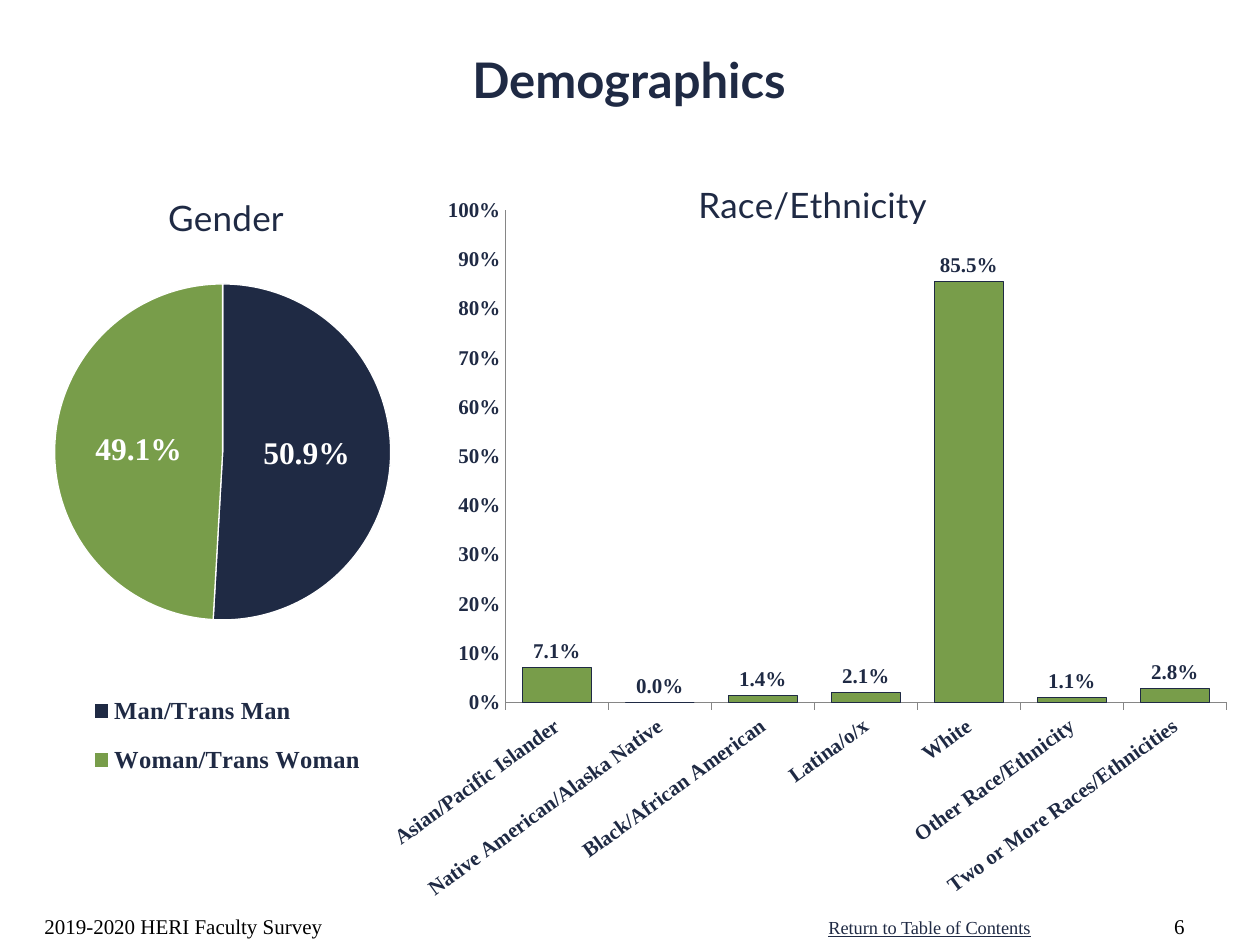
from lxml.etree import SubElement
from pptx import Presentation
from pptx.chart.data import CategoryChartData
from pptx.dml.color import RGBColor
from pptx.enum.chart import XL_CHART_TYPE, XL_LABEL_POSITION, XL_LEGEND_POSITION, XL_TICK_MARK
from pptx.enum.text import MSO_ANCHOR, MSO_AUTO_SIZE, PP_ALIGN
from pptx.oxml.ns import qn
from pptx.util import Pt

EMU_PER_PX = 914400 / 126
NAVY, GREEN, WHITE, BLACK, GRAY = "1F2A44", "789D4A", "FFFFFF", "000000", "868686"
HEADING, BODY = "Lato", "Times New Roman"


def px(value):
    return round(value * EMU_PER_PX)


def color(value):
    return RGBColor.from_string(value)


def style_font(font, size, fill, name=BODY, bold=False):
    font.size = Pt(size)
    font.name = name
    font.bold = bold
    font.color.rgb = color(fill)


def set_layout(element, index, target=None, **fractions):
    for old in element.findall(qn("c:layout")):
        element.remove(old)
    layout = SubElement(element, qn("c:layout"))
    element.insert(index, layout)
    manual = SubElement(layout, qn("c:manualLayout"))
    if target:
        SubElement(manual, qn("c:layoutTarget")).set("val", target)
    for axis in ("x", "y"):
        SubElement(manual, qn(f"c:{axis}Mode")).set("val", "edge")
    for key, value in fractions.items():
        SubElement(manual, qn(f"c:{key}")).set("val", str(value))


class SlideBuilder:
    def __init__(self, presentation):
        self.slide = presentation.slides.add_slide(presentation.slide_layouts[6])
        self.slide.background.fill.solid()
        self.slide.background.fill.fore_color.rgb = color(WHITE)

    def text(self, content, box, size, fill, name=BODY, bold=False, underline=False,
             align=PP_ALIGN.LEFT, anchor=MSO_ANCHOR.BOTTOM, wrap=True):
        shape = self.slide.shapes.add_textbox(*map(px, box))
        frame = shape.text_frame
        frame.text = content
        frame.word_wrap = wrap
        frame.auto_size = MSO_AUTO_SIZE.NONE if wrap else MSO_AUTO_SIZE.SHAPE_TO_FIT_TEXT
        frame.vertical_anchor = anchor
        paragraph = frame.paragraphs[0]
        paragraph.alignment = align
        font = paragraph.runs[0].font
        style_font(font, size, fill, name, bold)
        font.underline = underline

    def chart(self, kind, box, title, title_at, plot_area, values, number_format):
        data = CategoryChartData(number_format=number_format)
        data.categories = list(values)
        data.add_series("Series 1", list(values.values()))
        chart = self.slide.shapes.add_chart(kind, *map(px, box), data).chart
        style_font(chart.font, 12, NAVY, bold=True)
        chart.has_legend = False
        chart.has_title = True
        frame = chart.chart_title.text_frame
        frame.text = title
        style_font(frame.paragraphs[0].runs[0].font, 20, NAVY, HEADING)
        set_layout(chart.chart_title._element, 1, **title_at)
        plot = chart.plots[0]
        set_layout(plot._element.getparent(), 0, "inner", **plot_area)
        plot.has_data_labels = True
        plot.data_labels.number_format = "0.0%"
        plot.data_labels.number_format_is_linked = False
        return chart

    def pie(self, slice_colors, legend_at, **options):
        chart = self.chart(XL_CHART_TYPE.PIE, **options)
        plot = chart.plots[0]
        plot.vary_by_categories = True
        for index, fill in enumerate(slice_colors):
            style = plot.series[0].points[index].format
            style.fill.solid()
            style.fill.fore_color.rgb = color(fill)
            style.line.color.rgb = color(WHITE)
            style.line.width = Pt(0.75)
        labels = plot.data_labels
        labels.show_percentage = True
        labels.show_value = False
        labels.position = XL_LABEL_POSITION.CENTER
        style_font(labels.font, 18, WHITE, bold=True)
        chart.has_legend = True
        chart.legend.position = XL_LEGEND_POSITION.RIGHT
        chart.legend.include_in_layout = False
        style_font(chart.legend.font, 14, NAVY, bold=True)
        set_layout(chart.legend._element, 1, **legend_at)

    def columns(self, fill, label_angle, **options):
        chart = self.chart(XL_CHART_TYPE.COLUMN_CLUSTERED, **options)
        plot = chart.plots[0]
        plot.vary_by_categories = False
        plot.gap_width = 50
        style = plot.series[0].format
        style.fill.solid()
        style.fill.fore_color.rgb = color(fill)
        style.line.color.rgb = color(NAVY)
        style.line.width = Pt(0.25)
        plot.data_labels.show_value = True
        plot.data_labels.position = XL_LABEL_POSITION.OUTSIDE_END
        style_font(plot.data_labels.font, 12, NAVY, bold=True)
        category_axis, value_axis = chart.category_axis, chart.value_axis
        for axis in (category_axis, value_axis):
            axis.has_major_gridlines = False
            axis.format.line.color.rgb = color(GRAY)
            style_font(axis.tick_labels.font, 12, NAVY, bold=True)
        category_axis.major_tick_mark = XL_TICK_MARK.OUTSIDE
        body = category_axis._element.find(qn("c:txPr")).find(qn("a:bodyPr"))
        body.set("rot", str(label_angle * 60000))
        value_axis.major_tick_mark = XL_TICK_MARK.NONE
        value_axis.minimum_scale = 0
        value_axis.maximum_scale = 1
        value_axis.major_unit = 0.1
        value_axis.tick_labels.number_format = "0%"
        value_axis.tick_labels.number_format_is_linked = False


def main():
    presentation = Presentation()
    presentation.slide_width, presentation.slide_height = px(1260), px(945)
    builder = SlideBuilder(presentation)
    builder.text("Return to Table of Contents", (816, 910, 229, 35), 10.5, NAVY,
                 underline=True, anchor=MSO_ANCHOR.TOP, wrap=False)
    builder.text("Demographics", (-1, 0, 1260, 158), 28, NAVY, HEADING, bold=True,
                 align=PP_ALIGN.CENTER, anchor=MSO_ANCHOR.MIDDLE)
    builder.text("2019-2020 HERI Faculty Survey", (32, 882, 399, 63), 12, BLACK)
    builder.text("6", (1134, 882, 63, 63), 12, BLACK, align=PP_ALIGN.RIGHT)
    builder.pie(
        slice_colors=(NAVY, GREEN),
        legend_at={"x": 0.18, "y": 0.74, "w": 0.63, "h": 0.17},
        box=(4, 158, 451, 700),
        title="Gender",
        title_at={"x": 0.35, "y": 0.04},
        plot_area={"x": 0.09, "y": 0.18, "w": 0.79, "h": 0.48},
        values={"Man/Trans Man": 50.9, "Woman/Trans Woman": 49.1},
        number_format="0.0",
    )
    builder.columns(
        fill=GREEN,
        label_angle=-36,
        box=(378, 158, 849, 746),
        title="Race/Ethnicity",
        title_at={"x": 0.37, "y": 0.02},
        plot_area={"x": 0.15, "y": 0.07, "w": 0.85, "h": 0.66},
        values={
            "Asian/Pacific Islander": 0.071,
            "Native American/Alaska Native": 0,
            "Black/African American": 0.014,
            "Latina/o/x": 0.021,
            "White": 0.855,
            "Other Race/Ethnicity": 0.011,
            "Two or More Races/Ethnicities": 0.028,
        },
        number_format="0.0%",
    )
    presentation.save("out.pptx")


if __name__ == "__main__":
    main()
